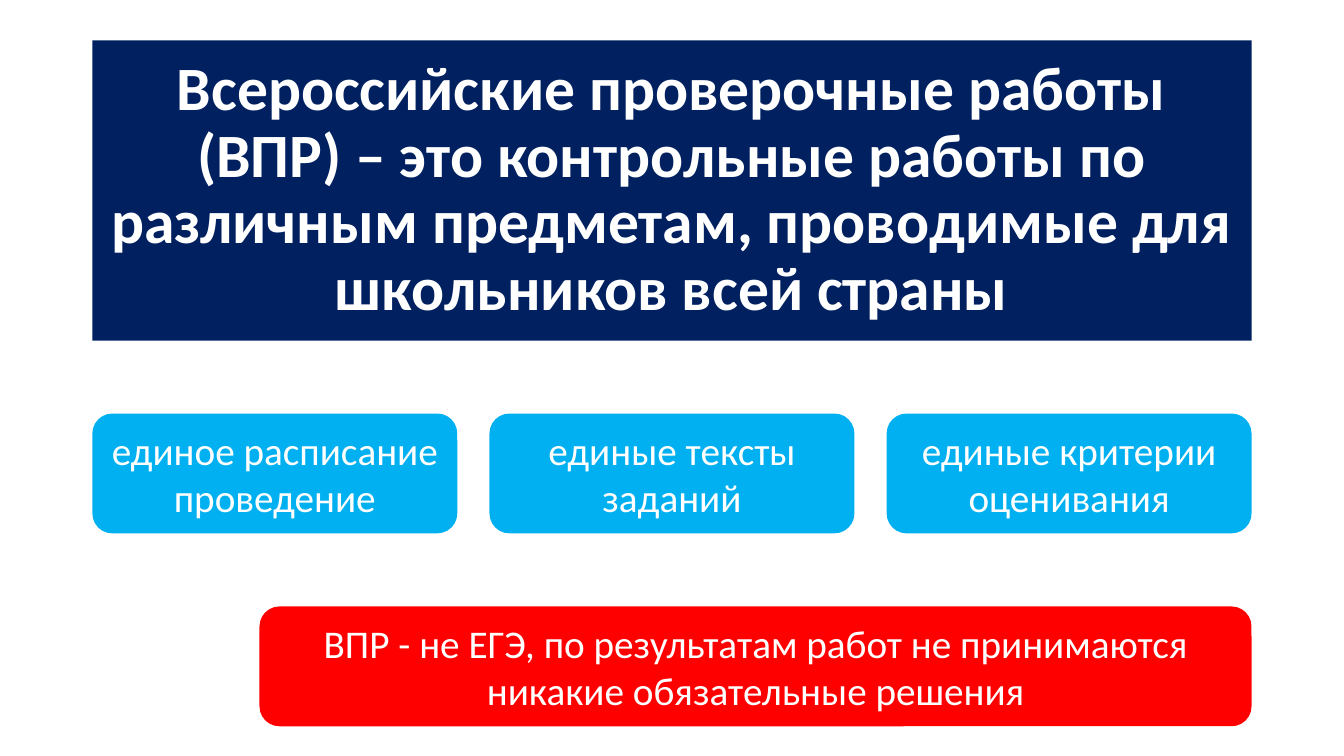
from dataclasses import dataclass

from pptx import Presentation
from pptx.dml.color import RGBColor
from pptx.enum import shapes, text
from pptx.util import Pt

# Content
TITLE = ("Всероссийские проверочные работы (ВПР) – это контрольные работы "
         "по различным предметам, проводимые для школьников всей страны")
FEATURES = ["единое расписание проведение",
            "единые тексты заданий",
            "единые критерии оценивания"]
WARNING = ("ВПР - не ЕГЭ, по результатам работ не принимаются "
           "никакие обязательные решения")


@dataclass(frozen=True)
class Theme:
    font: str = "Calibri"
    ink: str = "FFFFFF"
    title_fill: str = "002060"
    feature_fill: str = "00B0F0"
    warning_fill: str = "FF0000"
    title_size: int = 44
    body_size: int = 28


THEME = Theme()

# Layout, in points
LEFT, WIDTH = 66, 828
RIGHT = LEFT + WIDTH
TITLE_TOP, TITLE_H = 28.8, 214.6
FEATURE_TOP, WARNING_TOP, BOX_H = 295.4, 433.2, 85.6
GAP = 23
FEATURE_W = (WIDTH - GAP * (len(FEATURES) - 1)) / len(FEATURES)
WARNING_W = 708.6


def style(sp, words, fill, size, bold=False):
    """Fill a shape and set its centred text."""
    sp.fill.solid()
    sp.fill.fore_color.rgb = RGBColor.from_string(fill)
    tf = sp.text_frame
    tf.word_wrap = True
    tf.auto_size = text.MSO_AUTO_SIZE.NONE
    tf.vertical_anchor = text.MSO_ANCHOR.MIDDLE
    tf.text = words
    p = tf.paragraphs[0]
    p.alignment = text.PP_ALIGN.CENTER
    p.font.name = THEME.font
    p.font.size = Pt(size)
    p.font.bold = bold
    p.font.color.rgb = RGBColor.from_string(THEME.ink)
    return p


def add_box(s, left, top, width, words, fill):
    sp = s.shapes.add_shape(shapes.MSO_SHAPE.ROUNDED_RECTANGLE,
                            Pt(left), Pt(top), Pt(width), Pt(BOX_H))
    sp.shadow.inherit = False
    sp.line.fill.background()
    style(sp, words, fill, THEME.body_size)


def main():
    prs = Presentation()
    prs.slide_width, prs.slide_height = Pt(960), Pt(540)
    s = prs.slides.add_slide(prs.slide_layouts[5])

    # Title panel
    title = s.shapes.title
    title.left, title.top = Pt(LEFT), Pt(TITLE_TOP)
    title.width, title.height = Pt(WIDTH), Pt(TITLE_H)
    p = style(title, TITLE, THEME.title_fill, THEME.title_size, bold=True)
    p.line_spacing = 0.9

    # Row of features
    for i, words in enumerate(FEATURES):
        add_box(s, LEFT + i * (FEATURE_W + GAP), FEATURE_TOP, FEATURE_W,
                words, THEME.feature_fill)

    # Warning, flush with the right edge
    add_box(s, RIGHT - WARNING_W, WARNING_TOP, WARNING_W,
            WARNING, THEME.warning_fill)

    prs.save("out.pptx")


if __name__ == "__main__":
    main()
